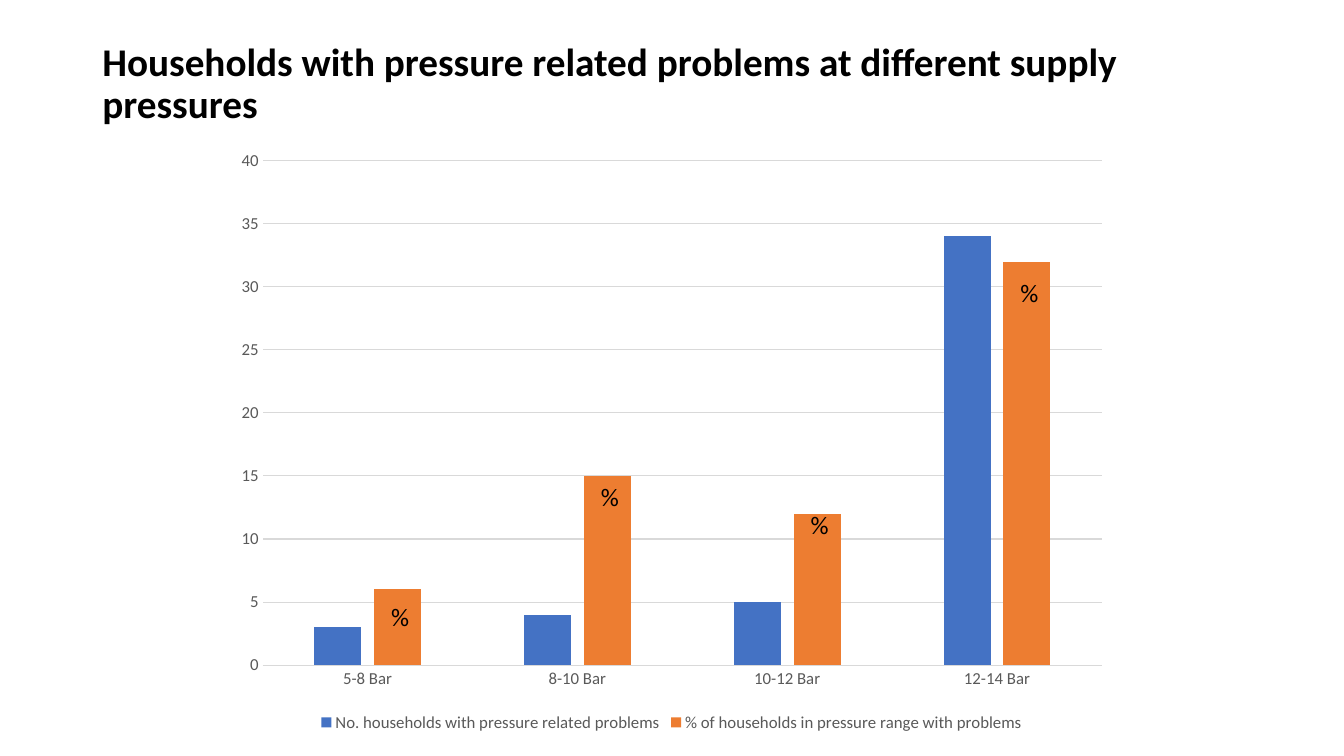
from pptx import Presentation, util as u
from pptx.chart import data as chart_data
from pptx.dml.color import RGBColor
from pptx.enum import chart as ch, text

COLORS = {"ink": "000000", "axis": "595959", "grid": "D9D9D9",
          "count": "4472C4", "share": "ED7D31"}
FONT = "Calibri"


class PressureSlide:
    """Holds the style and the slide; boxes are percentages of the slide size."""

    def __init__(self, deck):
        self.width, self.height = deck.slide_width, deck.slide_height
        self.slide = deck.slides.add_slide(deck.slide_layouts[5])

    def box(self, left, top, width, height):
        return (int(self.width * left / 100), int(self.height * top / 100),
                int(self.width * width / 100), int(self.height * height / 100))

    def color(self, name):
        return RGBColor.from_string(COLORS[name])

    def style(self, font, size, color="ink", bold=False):
        font.name, font.size, font.bold = FONT, u.Pt(size), bold
        font.color.rgb = self.color(color)

    def rule(self, line):
        line.color.rgb = self.color("grid")
        line.width = u.Pt(0.75)

    def title(self, wording, box):
        heading = self.slide.shapes.title
        heading.left, heading.top, heading.width, heading.height = self.box(*box)
        frame = heading.text_frame
        frame.auto_size = text.MSO_AUTO_SIZE.NONE
        frame.vertical_anchor = text.MSO_ANCHOR.MIDDLE
        paragraph = frame.paragraphs[0]
        paragraph.alignment = text.PP_ALIGN.LEFT
        paragraph.line_spacing = 0.9
        run = paragraph.add_run()
        run.text = wording
        self.style(run.font, 28, bold=True)

    def label(self, wording, box):
        frame = self.slide.shapes.add_textbox(*self.box(*box)).text_frame
        frame.word_wrap = False
        frame.auto_size = text.MSO_AUTO_SIZE.SHAPE_TO_FIT_TEXT
        run = frame.paragraphs[0].add_run()
        run.text = wording
        self.style(run.font, 18)

    def columns(self, categories, series, box):
        households = chart_data.CategoryChartData()
        households.categories = categories
        for name, values, _ in series:
            households.add_series(name, values)
        chart = self.slide.shapes.add_chart(
            ch.XL_CHART_TYPE.COLUMN_CLUSTERED, *self.box(*box), households).chart
        self.style(chart.font, 10)
        chart.has_title = False

        # Columns
        plot = chart.plots[0]
        plot.gap_width, plot.overlap, plot.vary_by_categories = 219, -27, False
        for columns, (_, _, color) in zip(plot.series, series):
            columns.format.fill.solid()
            columns.format.fill.fore_color.rgb = self.color(color)

        # Axes
        pressure, amount = chart.category_axis, chart.value_axis
        for axis in (pressure, amount):
            axis.major_tick_mark = axis.minor_tick_mark = ch.XL_TICK_MARK.NONE
            self.style(axis.tick_labels.font, 12, "axis")
        self.rule(pressure.format.line)
        amount.format.line.fill.background()
        amount.minimum_scale, amount.maximum_scale, amount.major_unit = 0, 40, 5
        amount.has_major_gridlines = True
        self.rule(amount.major_gridlines.format.line)

        # Legend
        chart.has_legend = True
        chart.legend.position = ch.XL_LEGEND_POSITION.BOTTOM
        chart.legend.include_in_layout = False
        self.style(chart.legend.font, 12, "axis")


def main():
    deck = Presentation()
    deck.slide_width, deck.slide_height = u.Inches(13.33), u.Inches(7.5)
    page = PressureSlide(deck)

    page.title("Households with pressure related problems at different supply pressures",
               (6.87, 1.52, 86.27, 19.33))
    page.columns(
        ["5-8 Bar", "8-10 Bar", "10-12 Bar", "12-14 Bar"],
        [("No. households with pressure related problems", (3, 4, 5, 34), "count"),
         ("% of households in pressure range with problems", (6, 15, 12, 32), "share")],
        (16.65, 18.35, 66.67, 79.05))

    # Percent signs on the share columns, one per pressure range
    for index, top in enumerate((78.93, 63.07, 66.77, 36)):
        page.label("%", (28.36 + 15.61 * index, top, 2.85, 5.33))

    deck.save("out.pptx")


if __name__ == "__main__":
    main()
